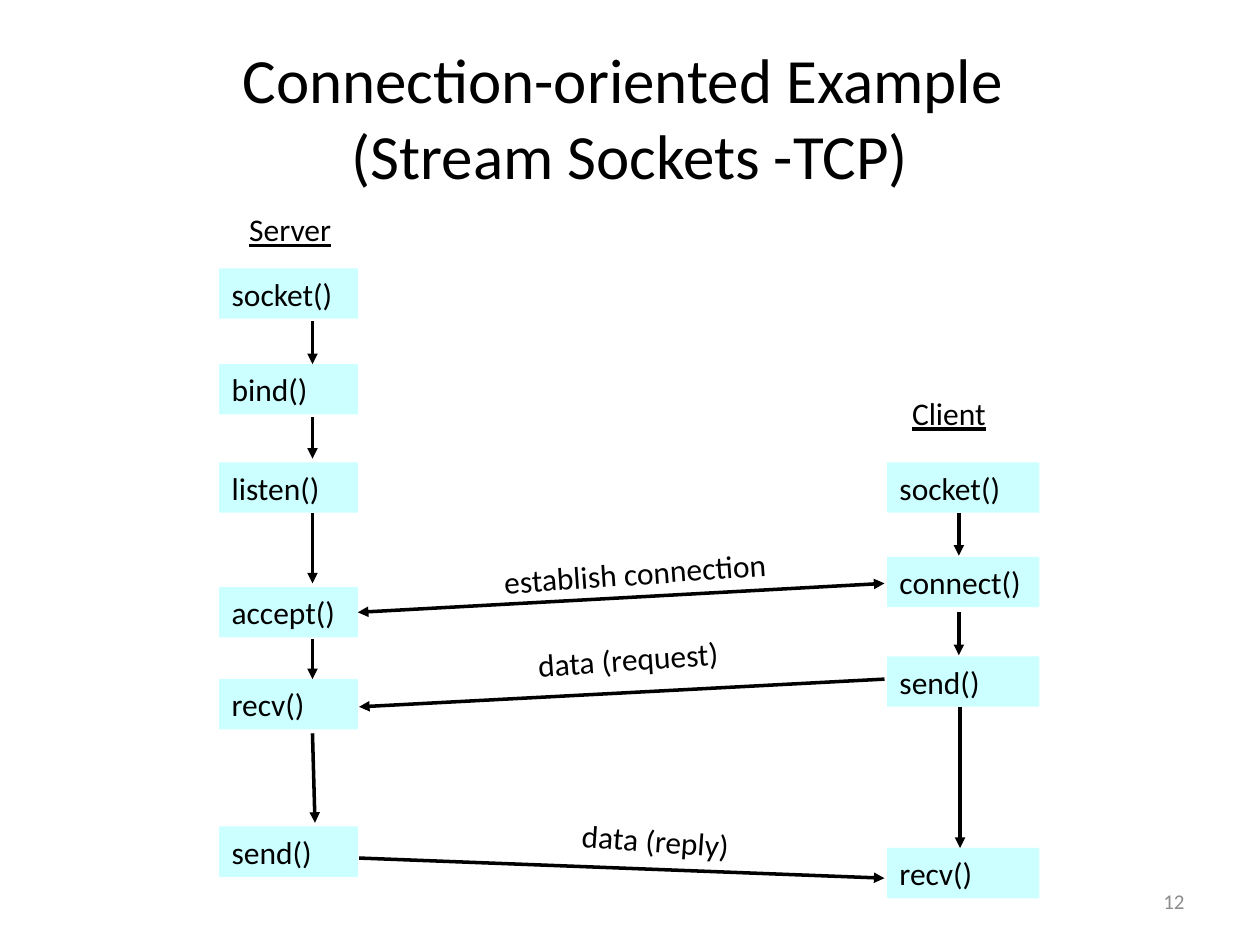
from lxml import etree
from pptx import Presentation
from pptx.dml.color import RGBColor
from pptx.enum.shapes import MSO_CONNECTOR, MSO_SHAPE
from pptx.enum.text import MSO_ANCHOR, MSO_AUTO_SIZE, PP_ALIGN
from pptx.oxml.ns import qn
from pptx.util import Inches, Pt

RECTANGLE = MSO_SHAPE.RECTANGLE
STRAIGHT = MSO_CONNECTOR.STRAIGHT
TOP, MIDDLE = MSO_ANCHOR.TOP, MSO_ANCHOR.MIDDLE
LEFT, CENTER, RIGHT = PP_ALIGN.LEFT, PP_ALIGN.CENTER, PP_ALIGN.RIGHT
NO_FIT = MSO_AUTO_SIZE.NONE

FONT = "Calibri"
BLACK, GRAY, CYAN = "000000", "8C8C8C", "CCFFFF"


def write(box, lines, size=18, color=BLACK, align=LEFT, anchor=TOP, underline=None):
    """Fill the box with one paragraph, its lines parted by line breaks."""
    frame = box.text_frame
    frame.word_wrap = True
    frame.auto_size = NO_FIT
    frame.vertical_anchor = anchor
    para = frame.paragraphs[0]
    para.alignment = align
    for index, line in enumerate(lines):
        if index:
            para.add_line_break()
        span = para.add_run()
        span.text = line
        span.font.name = FONT
        span.font.size = Pt(size)
        span.font.underline = underline
        span.font.color.rgb = RGBColor.from_string(color)


deck = Presentation()
deck.slide_width, deck.slide_height = Inches(10), Inches(7.5)
page = deck.slides.add_slide(deck.slide_layouts[5])

title = page.shapes.title
title.left, title.top = Inches(0.5), Inches(0.3)
title.width, title.height = Inches(9), Inches(1.25)
write(title, ["Connection-oriented Example ", "(Stream Sockets -TCP)"],
      size=36, align=CENTER, anchor=MIDDLE)

# Calls of each side: left, width, then name and top of every box
sides = [
    (1.74, 1.1, [("socket()", 2.13), ("bind()", 2.89), ("listen()", 3.67),
                 ("accept()", 4.66), ("recv()", 5.39), ("send()", 6.56)]),
    (7.04, 1.21, [("socket()", 3.67), ("connect()", 4.42),
                  ("send()", 5.21), ("recv()", 6.73)]),
]
for left, width, calls in sides:
    for name, top in calls:
        box = page.shapes.add_shape(RECTANGLE, Inches(left), Inches(top),
                                    Inches(width), Inches(0.4))
        box.shadow.inherit = False
        box.fill.solid()
        box.fill.fore_color.rgb = RGBColor.from_string(CYAN)
        box.line.fill.background()
        write(box, [name])

# Start x, y, end x, y, arrowheads
arrows = [
    (2.48, 2.55, 2.48, 2.89, ["tailEnd"]),
    (2.48, 3.31, 2.48, 3.64, ["tailEnd"]),
    (2.48, 4.07, 2.48, 4.63, ["tailEnd"]),
    (2.48, 5.07, 2.48, 5.39, ["tailEnd"]),
    (2.48, 5.82, 2.5, 6.53, ["tailEnd"]),
    (7.61, 4.07, 7.61, 4.41, ["tailEnd"]),
    (7.61, 4.86, 7.61, 5.2, ["tailEnd"]),
    (7.62, 5.61, 7.62, 6.73, ["tailEnd"]),
    (7.02, 4.63, 2.84, 4.86, ["headEnd", "tailEnd"]),
    (7.02, 5.39, 2.85, 5.61, ["tailEnd"]),
    (2.85, 6.81, 7.02, 6.97, ["tailEnd"]),
]
for *ends, heads in arrows:
    arrow = page.shapes.add_connector(STRAIGHT, *[Inches(value) for value in ends])
    arrow.line.width = Pt(2)
    arrow.line.color.rgb = RGBColor.from_string(BLACK)
    outline = arrow.line._get_or_add_ln()
    for head in heads:
        etree.SubElement(outline, qn(f"a:{head}"), type="triangle")
    etree.SubElement(arrow._element.spPr, qn("a:effectLst"))

# Text, left, top, width, rotation, formatting
labels = [
    ("Server", 1.88, 1.62, 1.2, 0, {"underline": True}),
    ("Client", 7.14, 3.08, 1.2, 0, {"underline": True}),
    ("establish connection", 3.9, 4.34, 2.5, 356, {}),
    ("data (request)", 4.17, 5.03, 1.66, 356, {}),
    ("data (reply)", 4.52, 6.47, 1.39, 4.1, {}),
    ("12", 7.17, 6.95, 2.33, 0,
     {"size": 12, "color": GRAY, "align": RIGHT, "anchor": MIDDLE}),
]
for text, left, top, width, rotation, formatting in labels:
    label = page.shapes.add_textbox(Inches(left), Inches(top), Inches(width), Inches(0.4))
    label.rotation = rotation
    write(label, [text], **formatting)

deck.save("out.pptx")
